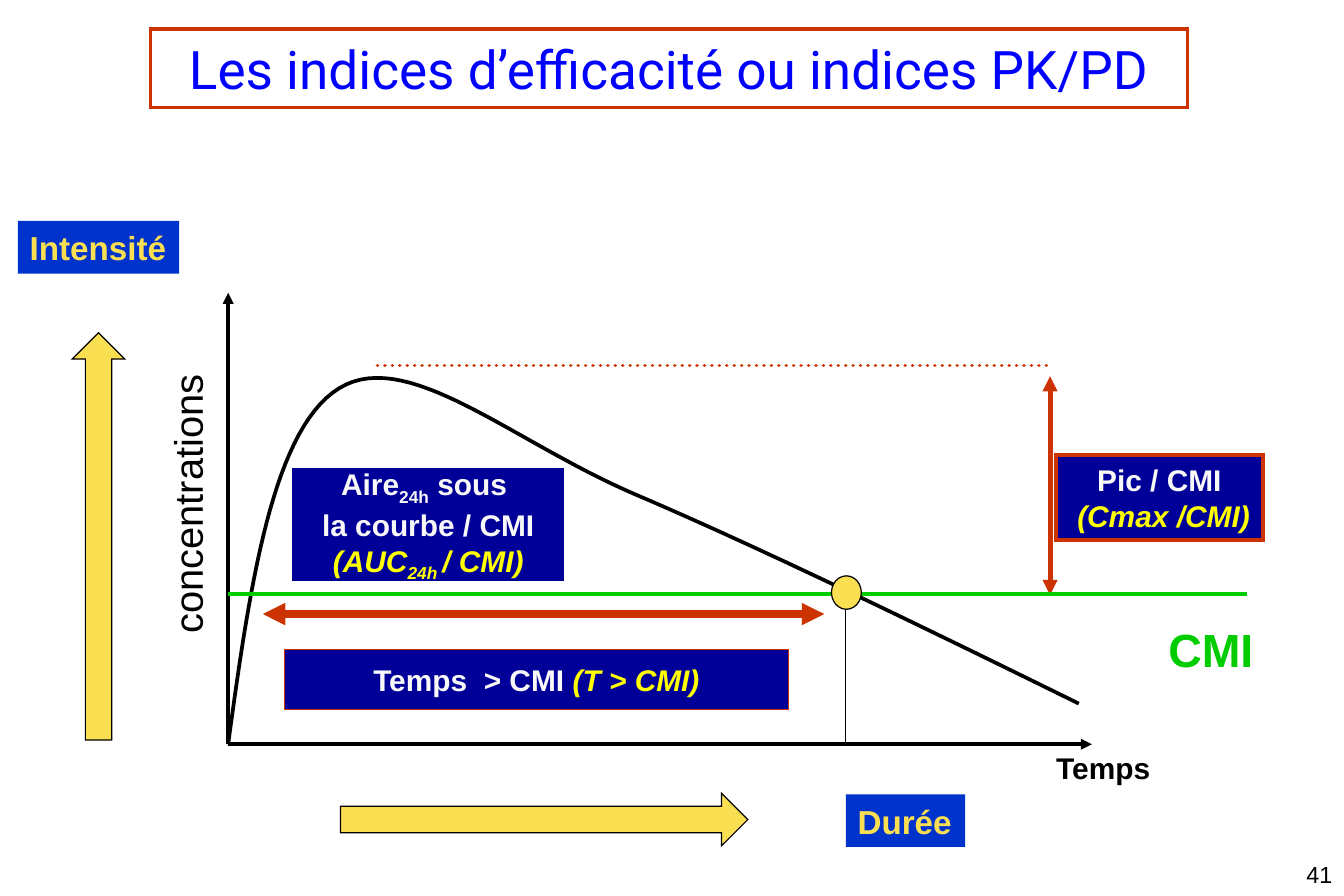
import pptx
import pptx.util
import pptx.dml.color
import pptx.enum.dml
import pptx.enum.shapes
import pptx.enum.text
import pptx.oxml.ns
from lxml import etree

Inches, Pt = pptx.util.Inches, pptx.util.Pt
qn = pptx.oxml.ns.qn
SHAPE = pptx.enum.shapes.MSO_SHAPE
ALIGN = pptx.enum.text.PP_ALIGN
ANCHOR = pptx.enum.text.MSO_ANCHOR

THEME = {
    "black": "000000", "white": "F8F8F8", "yellow": "FFFF00", "gold": "FBDF53",
    "navy": "000099", "blue": "0033CC", "red": "CC3300", "green": "00CC00",
    "title_blue": "0000FF",
    "title": 32, "cmi": 28, "axis": 24, "tag": 20, "body": 18, "number": 14,
    "font": "Arial", "title_font": "Roboto",
}

# Lengths are cells of a grid of one-inch columns and rows.
COLS, ROWS = 11.25, 7.5
ORIGIN_X, BASE_Y = 1.91, 6.23
CMI_Y, PEAK_Y = 4.97, 3.06
PEAK_X, CROSS_X = 8.79, 7.08
ARROW_W, TAG_H = 3.41, 0.44

CURVE_START = (ORIGIN_X, BASE_Y)
CURVE = [  # control, control, end
    ((2.09, 4.91), (2.28, 3.59), (2.84, 3.25)),
    ((3.41, 2.90), (4.29, 3.70), (5.32, 4.14)),
    ((6.35, 4.58), (7.69, 5.23), (9.03, 5.89)),
]
CURVE_STEPS = 30

LINES = [  # from, to, colour, width, arrowheads, dotted
    ((ORIGIN_X, BASE_Y), (ORIGIN_X, 2.45), "black", 2.25, ["tailEnd"], False),
    ((ORIGIN_X, BASE_Y), (9.14, BASE_Y), "black", 2.25, ["tailEnd"], False),
    ((2.2, 5.14), (6.9, 5.14), "red", 4.5, ["headEnd", "tailEnd"], False),
    ((PEAK_X, 3.15), (PEAK_X, 4.98), "red", 3, ["headEnd", "tailEnd"], False),
    ((3.16, PEAK_Y), (PEAK_X, PEAK_Y), "red", 2.25, [], True),
    ((ORIGIN_X, CMI_Y), (10.44, CMI_Y), "green", 2.25, [], False),
    ((CROSS_X, 4.94), (CROSS_X, BASE_Y), "black", 0.75, [], False),
]

SHAPES = [  # kind, box, fill, line, line width, rotation
    (SHAPE.OVAL, (6.96, 4.82, 0.25, 0.28), "gold", "black", 0.75, 0),
    (SHAPE.RIGHT_ARROW, (-0.88, 4.27, ARROW_W, TAG_H), "gold", "black", 0.75, 270),
    (SHAPE.RIGHT_ARROW, (2.85, 6.64, ARROW_W, TAG_H), "gold", "black", 0.75, 0),
]

# Each run: text, colour, style letters (b bold, i italic, s subscript)
BOXES = [  # box, fill, line, line width, size, wrap, runs
    ((1.26, 0.24, 8.68, 0.66), None, "red", 2.25, "title", True,
     [("Les indices d’efficacité ou indices PK/PD", "title_blue", "")]),
    ((2.38, 5.44, 4.22, 0.5), "navy", "red", 0.75, "body", False,
     [("Temps  > CMI ", "white", "b"), ("(T > CMI)", "yellow", "bi")]),
    ((8.84, 3.81, 1.73, 0.71), "navy", "red", 2.25, "body", False,
     [("Pic / CMI\n ", "white", "b"), ("(Cmax /CMI)", "yellow", "bi")]),
    ((2.45, 3.92, 2.27, 0.94), "navy", "navy", 0.75, "body", False,
     [("Aire", "white", "b"), ("24h", "white", "bs"),
      (" sous \nla courbe / CMI\n", "white", "b"), ("(AUC", "yellow", "bi"),
      ("24h ", "yellow", "bis"), ("/ CMI)", "yellow", "bi")]),
    ((0.15, 1.85, 1.35, TAG_H), "blue", None, 0, "tag", False,
     [("Intensité", "gold", "b")]),
    ((CROSS_X, 6.65, 1, TAG_H), "blue", None, 0, "tag", False,
     [("Durée", "gold", "b")]),
]

LABELS = [  # box, size, colour, style, alignment, rotation, text
    ((0.38, 3.97, 2.37, 0.5), "axis", "black", "", ALIGN.CENTER, 270, "concentrations"),
    ((8.67, BASE_Y, 1.13, 0.4), "body", "black", "b", ALIGN.CENTER, 0, "Temps"),
    ((9.64, 5.15, 0.99, 0.57), "cmi", "green", "b", ALIGN.CENTER, 0, "CMI"),
    ((COLS - 2.91, ROWS - 0.35, 2.91, 0.35), "number", "black", "", ALIGN.RIGHT, 0, "41"),
]


def rgb(name):
    return pptx.dml.color.RGBColor.from_string(THEME[name])


def place(box):
    return [Inches(v) for v in box]


def paint(sp, fill, line, width):
    sp.shadow.inherit = False
    if fill:
        sp.fill.solid()
        sp.fill.fore_color.rgb = rgb(fill)
    else:
        sp.fill.background()
    if line:
        sp.line.color.rgb = rgb(line)
        sp.line.width = Pt(width)
        etree.SubElement(sp._element.spPr.find(qn("a:ln")), qn("a:miter"), lim="800000")
    else:
        sp.line.fill.background()


def write(sp, runs, size, align, wrap=True, anchor=ANCHOR.MIDDLE):
    """Fill a shape with one paragraph of styled runs; a newline is a line break."""
    tf = sp.text_frame
    tf.word_wrap = wrap
    tf.vertical_anchor = anchor
    p = tf.paragraphs[0]
    p.alignment = align
    for text, colour, style in runs:
        for i, part in enumerate(text.split("\n")):
            if i:
                p.add_line_break()
            if not part:
                continue
            r = p.add_run()
            r.text = part
            r.font.name = THEME["title_font" if size == "title" else "font"]
            r.font.size = Pt(THEME[size])
            r.font.color.rgb = rgb(colour)
            r.font.bold = "b" in style
            r.font.italic = "i" in style
            if "s" in style:
                r.font._element.set("baseline", "-25000")


def add_line(s, start, end, colour, width, heads, dotted):
    cxn = s.shapes.add_connector(
        pptx.enum.shapes.MSO_CONNECTOR.STRAIGHT, *place(start + end))
    cxn.line.color.rgb = rgb(colour)
    cxn.line.width = Pt(width)
    props = cxn._element.spPr
    ln = props.find(qn("a:ln"))
    if dotted:
        cxn.line.dash_style = pptx.enum.dml.MSO_LINE.ROUND_DOT
        ln.set("cap", "rnd")
    for head in heads:
        etree.SubElement(ln, qn("a:" + head), type="triangle")
    etree.SubElement(props, qn("a:effectLst"))


def curve_points():
    """Sample the cubic pieces of the concentration curve."""
    start = CURVE_START
    for c1, c2, end in CURVE:
        for i in range(1, CURVE_STEPS + 1):
            t = i / CURVE_STEPS
            u = 1 - t
            yield place(u**3 * a + 3 * u * u * t * b + 3 * u * t * t * c + t**3 * d
                        for a, b, c, d in zip(start, c1, c2, end))
        start = end


def main():
    prs = pptx.Presentation()
    prs.slide_width, prs.slide_height = Inches(COLS), Inches(ROWS)
    s = prs.slides.add_slide(prs.slide_layouts[6])

    outline = s.shapes.build_freeform(*place(CURVE_START))
    outline.add_line_segments(curve_points(), close=False)
    paint(outline.convert_to_shape(), None, "black", 2.25)

    for line in LINES:
        add_line(s, *line)
    for kind, box, fill, line, width, rotation in SHAPES:
        sp = s.shapes.add_shape(kind, *place(box))
        sp.rotation = rotation
        paint(sp, fill, line, width)
    for box, fill, line, width, size, wrap, runs in BOXES:
        sp = s.shapes.add_shape(SHAPE.RECTANGLE, *place(box))
        paint(sp, fill, line, width)
        write(sp, runs, size, ALIGN.LEFT if size == "tag" else ALIGN.CENTER, wrap)
    for box, size, colour, style, align, rotation, text in LABELS:
        sp = s.shapes.add_textbox(*place(box))
        sp.rotation = rotation
        write(sp, [(text, colour, style)], size, align, anchor=ANCHOR.TOP)

    prs.save("out.pptx")


if __name__ == "__main__":
    main()
